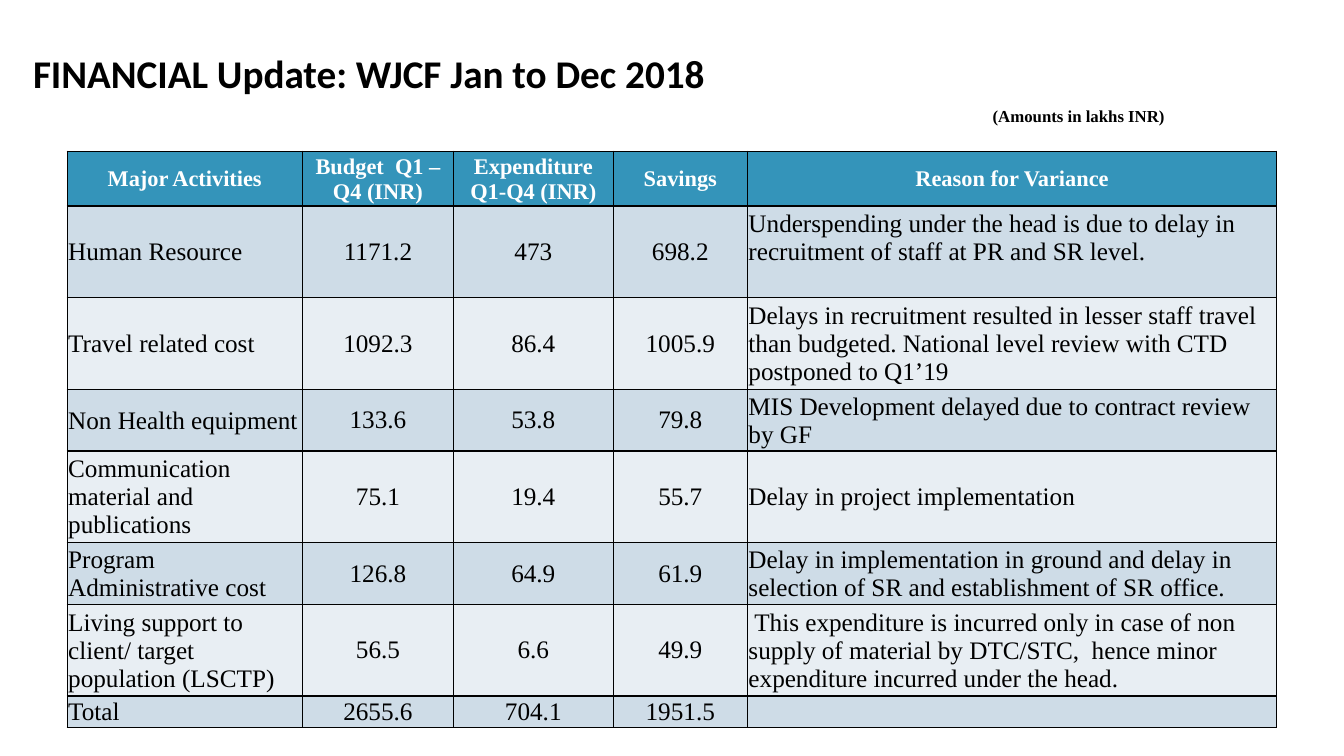
from pptx import Presentation
from pptx import util as u
from pptx.dml.color import RGBColor
from pptx.enum import text
from pptx.oxml import parse_xml
from pptx.oxml.ns import nsdecls

COLORS = {
    "ink": "000000",
    "header_text": "FFFFFF",
    "header": "3494BA",
    "odd": "CEDCE7",
    "even": "E8EEF3",
}
UNIT = u.Inches(1) / 12
GRID_COLUMNS, GRID_ROWS = 160, 90
SERIF = "Times New Roman"

COLUMNS = [28, 18, 19, 16, 63]
HEADER_HEIGHT = 6.5
LINE_HEIGHT = 3.6
ROW_PADDING = 0.12
HEADINGS = ["Major Activities", "Budget  Q1 – Q4 (INR)", "Expenditure Q1-Q4 (INR)",
            "Savings", "Reason for Variance"]
ACTIVITIES = [
    (3, "Human Resource", "1171.2", "473", "698.2",
     "Underspending under the head is due to delay in recruitment of staff at PR and SR level."),
    (3, "Travel related cost", "1092.3", "86.4", "1005.9",
     "Delays in recruitment resulted in lesser staff travel than budgeted. "
     "National level review with CTD postponed to Q1’19"),
    (2, "Non Health equipment", "133.6", "53.8", "79.8",
     "MIS Development delayed due to contract review by GF"),
    (3, "Communication material and publications", "75.1", "19.4", "55.7",
     "Delay in project implementation"),
    (2, "Program Administrative cost", "126.8", "64.9", "61.9",
     "Delay in implementation in ground and delay in selection of SR "
     "and establishment of SR office."),
    (3, "Living support to client/ target population (LSCTP)", "56.5", "6.6", "49.9",
     " This expenditure is incurred only in case of non supply of material by DTC/STC,  "
     "hence minor expenditure incurred under the head."),
    (1, "Total", "2655.6", "704.1", "1951.5", ""),
]


def cells(count):
    return u.Emu(round(count * UNIT))


def add_span(para, words, size, font, color, bold):
    span = para.add_run()
    span.text = words
    span.font.size = u.Pt(size)
    span.font.name = font
    span.font.bold = bold
    span.font.color.rgb = RGBColor.from_string(COLORS[color])


def add_label(page, box, words, size, font):
    frame = page.shapes.add_textbox(*map(cells, box)).text_frame
    frame.word_wrap = True
    frame.auto_size = text.MSO_AUTO_SIZE.SHAPE_TO_FIT_TEXT
    add_span(frame.paragraphs[0], words, size, font, "ink", True)


def add_borders(cell):
    properties = cell._tc.get_or_add_tcPr()
    for side in "LRTB":
        properties.append(parse_xml(
            f'<a:ln{side} {nsdecls("a")} w="{u.Pt(1)}"><a:solidFill>'
            f'<a:srgbClr val="{COLORS["ink"]}"/></a:solidFill></a:ln{side}>'))


def fill_cell(cell, words, fill, centered, is_header):
    add_borders(cell)
    cell.fill.solid()
    cell.fill.fore_color.rgb = RGBColor.from_string(COLORS[fill])
    cell.vertical_anchor = text.MSO_ANCHOR.MIDDLE
    inset = u.Inches(0 if centered and not is_header else 0.01)
    cell.margin_left = cell.margin_right = cell.margin_top = inset
    cell.margin_bottom = 0
    para = cell.text_frame.paragraphs[0]
    para.alignment = text.PP_ALIGN.CENTER if centered else text.PP_ALIGN.LEFT
    if words:
        size, color = (16, "header_text") if is_header else (18, "ink")
        add_span(para, words, size, SERIF, color, is_header)


def add_budget_table(page, left, top):
    heights = [HEADER_HEIGHT] + [lines * LINE_HEIGHT + ROW_PADDING for lines, *_ in ACTIVITIES]
    box = (left, top, sum(COLUMNS), sum(heights))
    table = page.shapes.add_table(len(heights), len(COLUMNS), *map(cells, box)).table
    for column, width in zip(table.columns, COLUMNS):
        column.width = cells(width)
    for row, height in zip(table.rows, heights):
        row.height = cells(height)
    for row_index, values in enumerate([HEADINGS] + [entry[1:] for entry in ACTIVITIES]):
        is_header = row_index == 0
        fill = "header" if is_header else ("even", "odd")[row_index % 2]
        for column_index, words in enumerate(values):
            centered = is_header or 0 < column_index < len(COLUMNS) - 1
            fill_cell(table.cell(row_index, column_index), words, fill, centered, is_header)
    table.cell(1, len(COLUMNS) - 1).margin_bottom = cells(LINE_HEIGHT - 0.25)


def build_financial_page(deck):
    page = deck.slides.add_slide(deck.slide_layouts[6])
    add_label(page, (2.75, 5.25, 106, 6.8), "FINANCIAL Update: WJCF Jan to Dec 2018", 28, "Calibri")
    add_budget_table(page, 8, 18)
    add_label(page, (117, 12, 23, 3.6), "(Amounts in lakhs INR)", 12, SERIF)


def main():
    deck = Presentation()
    deck.slide_width, deck.slide_height = cells(GRID_COLUMNS), cells(GRID_ROWS)
    build_financial_page(deck)
    deck.save("out.pptx")


if __name__ == "__main__":
    main()
